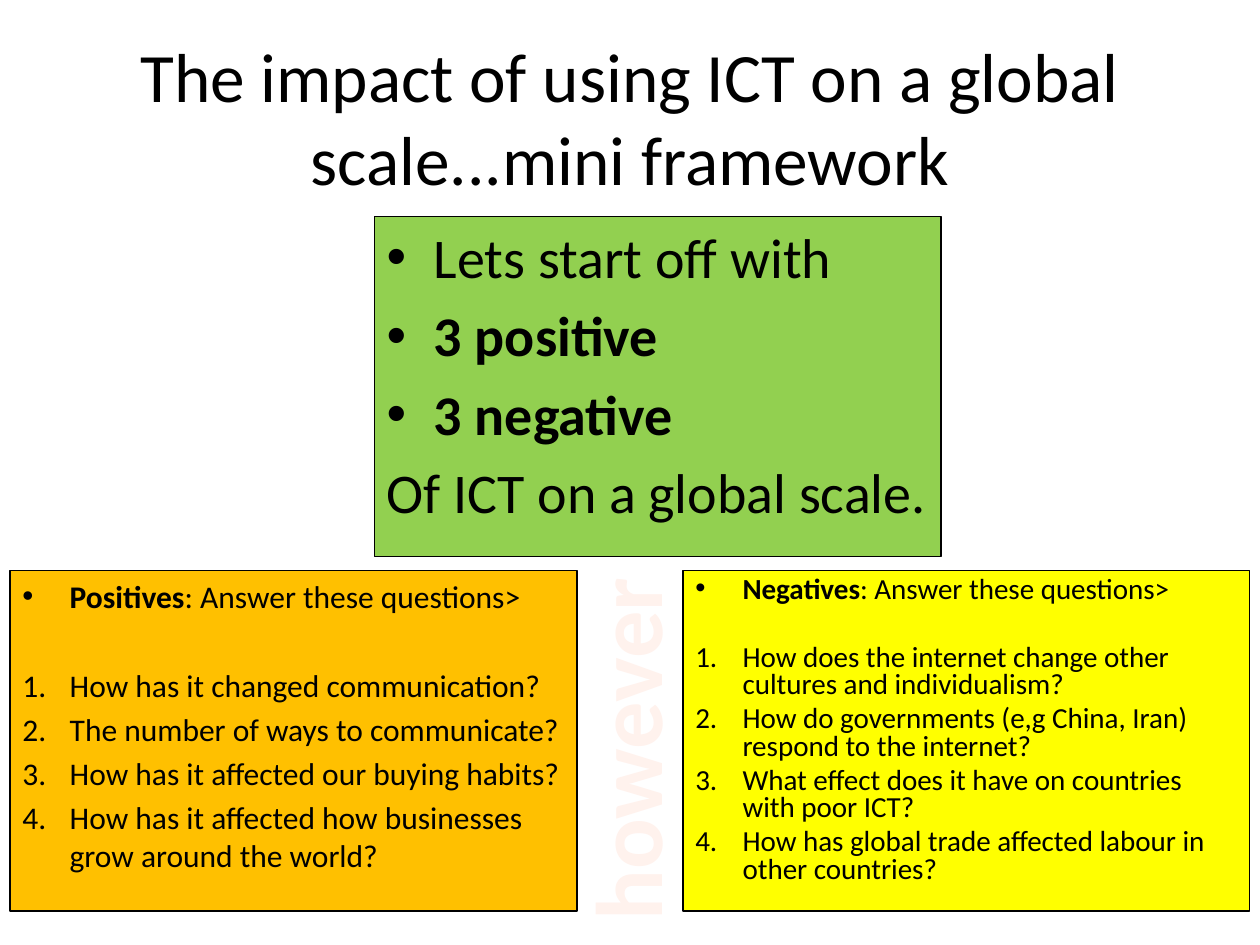
from lxml import etree
from pptx import Presentation
from pptx import util as u
from pptx.dml.color import RGBColor
from pptx.enum import shapes, text
from pptx.oxml import ns

WIDTH, HEIGHT = u.Inches(10), u.Inches(7.5)
PANEL_SIZE = (0.45, 0.36)
LINE_HEIGHT = 1.22
INDENT = u.Inches(0.375)


def color(value):
    """Turn a hex string into a colour."""
    return RGBColor.from_string(value)


def place(box):
    """Turn shares of the slide into lengths."""
    left, top, width, height = box
    return [round(share * side) for share, side in zip(box, (WIDTH, HEIGHT) * 2)]


def add_run(paragraph, content, size, bold=False, ink="000000"):
    """Append one styled run to a paragraph."""
    run = paragraph.add_run()
    run.text = content
    run.font.name = "Calibri"
    run.font.size = u.Pt(size)
    run.font.bold = bold
    run.font.color.rgb = color(ink)


def set_marker(paragraph, marker):
    """Give a paragraph a hanging indent and a bullet, a number or no marker."""
    properties = paragraph._p.get_or_add_pPr()
    properties.set("marL", str(INDENT))
    properties.set("indent", str(-INDENT))
    if marker == "bullet":
        etree.SubElement(properties, ns.qn("a:buFont"), typeface="Arial")
        etree.SubElement(properties, ns.qn("a:buChar"), char="•")
    elif marker == "number":
        etree.SubElement(properties, ns.qn("a:buFont"), typeface="+mj-lt")
        etree.SubElement(properties, ns.qn("a:buAutoNum"), type="arabicPeriod")
    else:
        etree.SubElement(properties, ns.qn("a:buNone"))


def add_panel(slide, box, fill, size, lines, spacing=1.0):
    """Add a filled box of lines, each a marker, its runs and the blank lines above."""
    shape = slide.shapes.add_shape(shapes.MSO_SHAPE.RECTANGLE, *place(box))
    shape.shadow.inherit = False
    shape.fill.solid()
    shape.fill.fore_color.rgb = color(fill)
    shape.line.color.rgb = color("000000")
    shape.line.width = u.Pt(0.75)
    frame = shape.text_frame
    frame.word_wrap = True
    frame.vertical_anchor = text.MSO_ANCHOR.TOP
    for index, (marker, runs, blank_lines) in enumerate(lines):
        paragraph = frame.add_paragraph() if index else frame.paragraphs[0]
        paragraph.alignment = text.PP_ALIGN.LEFT
        paragraph.line_spacing = spacing
        gap = 0.2 + blank_lines * (0.2 + LINE_HEIGHT * spacing)
        paragraph.space_before = u.Pt(round(gap * size, 1))
        set_marker(paragraph, marker)
        for content, bold in runs:
            add_run(paragraph, content, size, bold)


def add_questions(slide, box, fill, size, heading, questions, spacing=1.0):
    """Add a panel with a bulleted heading over numbered questions."""
    lines = [("bullet", [(heading, True), (": Answer these questions>", False)], 0)]
    lines += [("number", [(question, False)], 0 if index else 1)
              for index, question in enumerate(questions)]
    add_panel(slide, box, fill, size, lines, spacing)


def add_label(slide, box, content, size, bold=False, ink="000000", rotation=0, wrap=True):
    """Add centred text in a clear box."""
    shape = slide.shapes.add_textbox(*place(box))
    shape.rotation = rotation
    frame = shape.text_frame
    frame.word_wrap = wrap
    frame.vertical_anchor = text.MSO_ANCHOR.MIDDLE
    paragraph = frame.paragraphs[0]
    paragraph.alignment = text.PP_ALIGN.CENTER
    add_run(paragraph, content, size, bold, ink)


def main():
    """Build and save the slide."""
    presentation = Presentation()
    presentation.slide_width, presentation.slide_height = WIDTH, HEIGHT
    slide = presentation.slides.add_slide(presentation.slide_layouts[6])
    add_label(slide, (0.05, 0.04, 0.9, 1 / 6),
              "The impact of using ICT on a global scale...mini framework", 39.6)
    add_panel(slide, (0.297, 0.229, *PANEL_SIZE), "92D050", 32, [
        ("bullet", [("Lets start off with", False)], 0),
        ("bullet", [("3 positive", True)], 0),
        ("bullet", [("3 negative", True)], 0),
        ("none", [("Of ICT on a global scale.", False)], 0),
    ])
    add_questions(slide, (0.008, 0.604, *PANEL_SIZE), "FFC000", 18, "Positives", [
        "How has it changed communication?",
        "The number of ways to communicate?",
        "How has it affected our buying habits?",
        "How has it affected how businesses grow around the world?",
    ])
    add_questions(slide, (0.542, 0.604, *PANEL_SIZE), "FFFF00", 16.6, "Negatives", [
        "How does the internet change other cultures and individualism?",
        "How do governments (e,g China, Iran) respond to the internet?",
        "What effect does it have on countries with poor ICT?",
        "How has global trade affected labour in other countries?",
    ], spacing=0.8)
    add_label(slide, (0.348, 0.725, 0.295, 0.135), "however", 54,
              bold=True, ink="FFF2ED", rotation=270, wrap=False)
    presentation.save("out.pptx")


if __name__ == "__main__":
    main()
